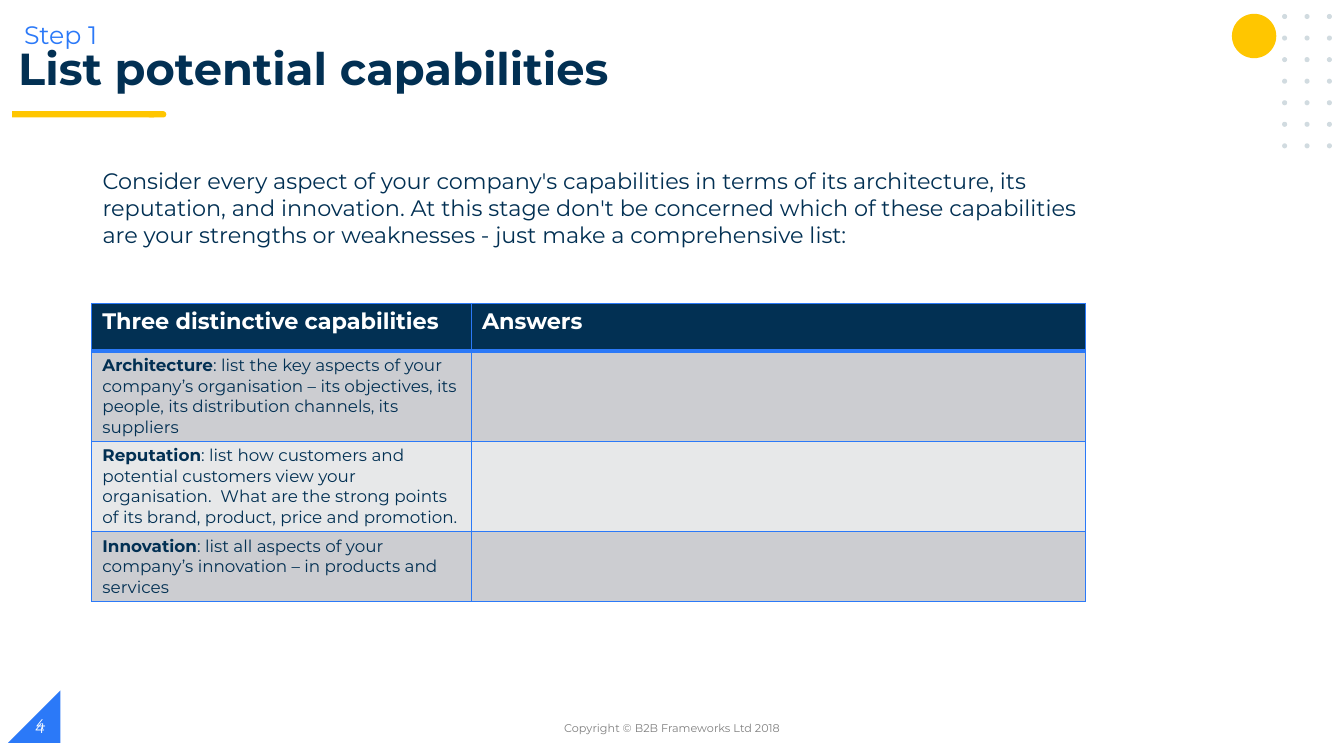
from lxml import etree
from pptx import Presentation
from pptx.dml.color import RGBColor
from pptx.enum import shapes, text
from pptx.oxml import ns
from pptx.util import Pt

COLOURS = {"navy": "023053", "blue": "2B79F8", "yellow": "FFC600", "dot": "D1DBE0",
           "white": "FFFFFF", "grey": "808080", "dark_row": "CCCDD1", "light_row": "E7E8E9"}
FONT = "Montserrat"
SHAPE = shapes.MSO_SHAPE
MIDDLE = text.MSO_ANCHOR.MIDDLE

prs = Presentation()
prs.slide_width, prs.slide_height = Pt(960), Pt(540)
s = prs.slides.add_slide(prs.slide_layouts[5])


def add_solid(kind, left, top, width, height, colour):
    """Add a preset shape with a plain fill, no line and no shadow."""
    sp = s.shapes.add_shape(kind, Pt(left), Pt(top), Pt(width), Pt(height))
    sp.shadow.inherit = False
    sp.fill.solid()
    sp.fill.fore_color.rgb = RGBColor.from_string(COLOURS[colour])
    sp.line.fill.background()
    return sp


def style(p, size, colour, bold=None):
    p.font.name, p.font.size, p.font.bold = FONT, Pt(size), bold
    p.font.color.rgb = RGBColor.from_string(COLOURS[colour])


# Decoration
corner = add_solid(SHAPE.RIGHT_TRIANGLE, 5.8, 493.2, 37.4, 37.4, "blue")
corner._element.spPr.find(ns.qn("a:xfrm")).set("flipH", "1")
add_solid(SHAPE.FLOWCHART_TERMINATOR, 105.1, 79.4, 13.7, 4.5, "yellow")
add_solid(SHAPE.RECTANGLE, 8.6, 79.4, 101.5, 4.5, "yellow")
add_solid(SHAPE.OVAL, 880, 9.9, 31.7, 31.7, "yellow")
for row in range(7):
    for col in range(3):
        add_solid(SHAPE.OVAL, 915.8 + 16 * col, 10 + 15.4 * row, 3.6, 3.6, "dot")

# Capabilities table
ROWS = [
    ("Architecture", ": list the key aspects of your company’s organisation – its objectives, "
     "its people, its distribution channels, its suppliers"),
    ("Reputation", ": list how customers and potential customers view your organisation.  "
     "What are the strong points of its brand, product, price and promotion."),
    ("Innovation", ": list all aspects of your company’s innovation – in products and services"),
]
table = s.shapes.add_table(4, 2, Pt(65.5), Pt(216.7), Pt(709.7), Pt(212.8)).table
for column, width in zip(table.columns, (271.2, 438.5)):
    column.width = Pt(width)
for row, height in zip(table.rows, (34, 64.4, 64.4, 50)):
    row.height = Pt(height)

for p, heading in zip((c.text_frame.paragraphs[0] for c in table.rows[0].cells),
                      ("Three distinctive capabilities", "Answers")):
    p.text = heading
    style(p, 16, "white", True)
for i, (name, description) in enumerate(ROWS, 1):
    cell = table.cell(i, 0)
    cell.vertical_anchor = MIDDLE
    p = cell.text_frame.paragraphs[0]
    style(p, 12, "navy", False)
    r = p.add_run()
    r.text, r.font.bold = name, True
    r = p.add_run()
    r.text = description
    for r in p.runs:
        r.font.name, r.font.size = FONT, Pt(12)
        r.font.color.rgb = RGBColor.from_string(COLOURS["navy"])
    style(table.cell(i, 1).text_frame.paragraphs[0], 12, "navy")

for i, fill in enumerate(("navy", "dark_row", "light_row", "dark_row")):
    for cell in table.rows[i].cells:
        cell.margin_left = cell.margin_right = Pt(7.7)
        cell.margin_top = cell.margin_bottom = Pt(3)
        tcPr = cell._tc.get_or_add_tcPr()
        for side in "LRTB":
            heavy = (i, side) in ((0, "B"), (1, "T"))
            ln = etree.SubElement(tcPr, ns.qn(f"a:ln{side}"), w=str(Pt(3 if heavy else 1)))
            solid = etree.SubElement(ln, ns.qn("a:solidFill"))
            etree.SubElement(solid, ns.qn("a:srgbClr"), val=COLOURS["blue"])
        cell.fill.solid()
        cell.fill.fore_color.rgb = RGBColor.from_string(COLOURS[fill])

# Title
title = s.shapes.title
title.left, title.top, title.width, title.height = Pt(5.8), Pt(30.2), Pt(722.9), Pt(40.3)
tf = title.text_frame
tf.text = "List potential capabilities"
tf.vertical_anchor = MIDDLE
tf.auto_size = text.MSO_AUTO_SIZE.NONE
p = tf.paragraphs[0]
p.alignment, p.line_spacing = text.PP_ALIGN.LEFT, 0.9
style(p, 32, "navy", True)

# Text boxes: words, place, size, colour, anchor, alignment
TOP, LEFT, CENTER = text.MSO_ANCHOR.TOP, text.PP_ALIGN.LEFT, text.PP_ALIGN.CENTER
BOXES = [
    ("Consider every aspect of your company's capabilities in terms of its architecture, its "
     "reputation, and innovation. At this stage don't be concerned which of these capabilities "
     "are your strengths or weaknesses - just make a comprehensive list:",
     (66.2, 115.9, 715, 65.5), 16, "navy", TOP, LEFT),
    ("Step 1", (10.1, 10.1, 100, 29), 18, "blue", TOP, LEFT),
    ("4", (18, 505.4, 216, 28.8), 10, "white", MIDDLE, LEFT),
    ("Copyright © B2B Frameworks Ltd 2018", (318.2, 505.4, 324, 28.8), 8, "grey", MIDDLE, CENTER),
    ("4", (18.7, 502.6, 216, 28.8), 10, "white", MIDDLE, LEFT),
]
for words, place, size, colour, anchor, alignment in BOXES:
    tf = s.shapes.add_textbox(*map(Pt, place)).text_frame
    tf.word_wrap, tf.vertical_anchor = True, anchor
    p = tf.paragraphs[0]
    p.text, p.alignment = words, alignment
    style(p, size, colour)

prs.save("out.pptx")
